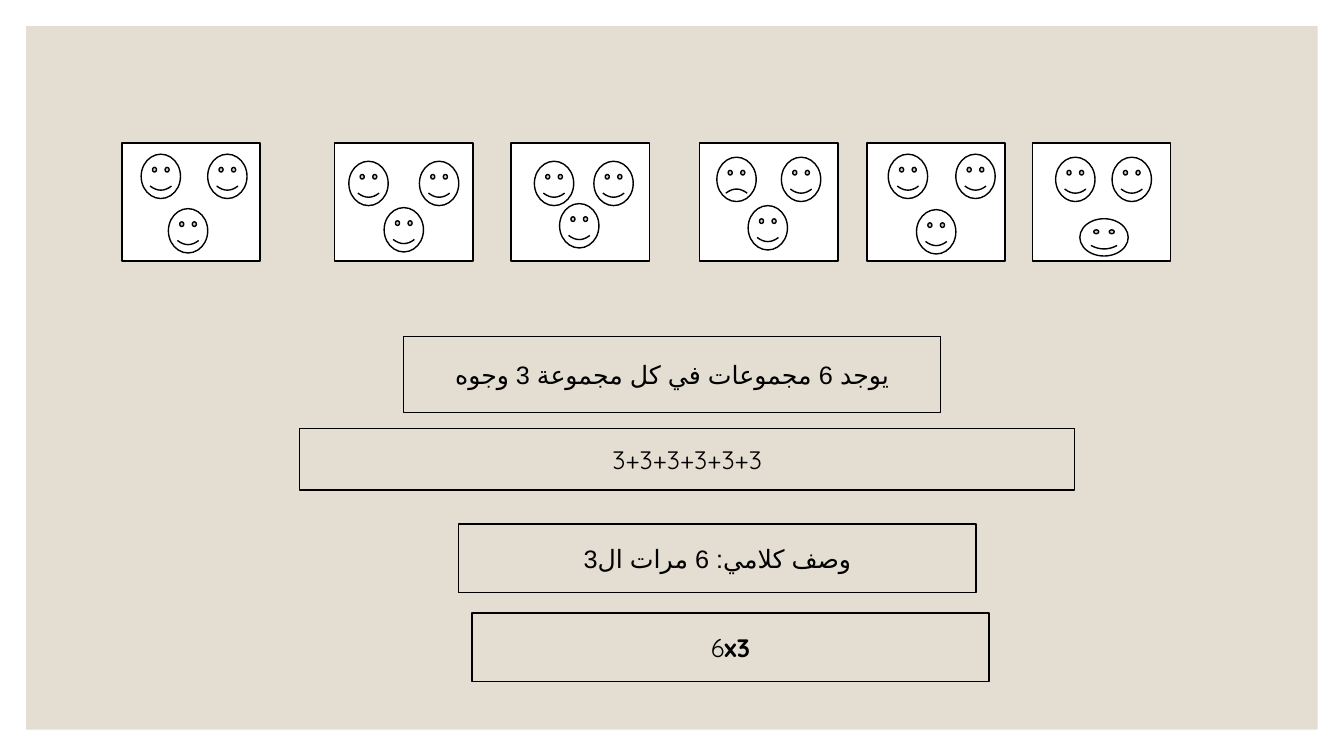
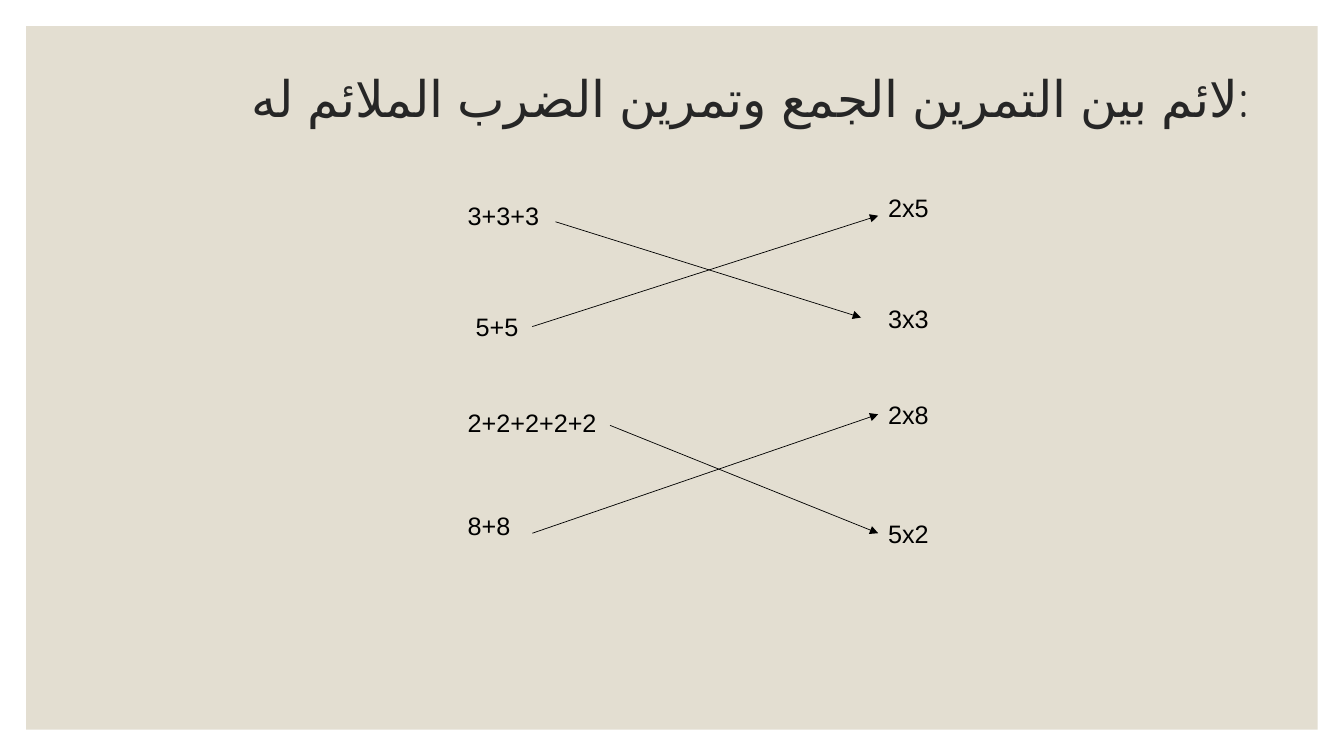
from pptx import Presentation
from pptx.dml.color import RGBColor
from pptx.enum.lang import MSO_LANGUAGE_ID
from pptx.enum.shapes import MSO_CONNECTOR, MSO_SHAPE
from pptx.enum.text import MSO_ANCHOR, PP_ALIGN
from pptx.oxml.ns import qn
from pptx.util import Inches, Pt
from lxml.etree import SubElement

BLACK = RGBColor(0x00, 0x00, 0x00)
WHITE = RGBColor(0xFF, 0xFF, 0xFF)
SAND = RGBColor(0xE3, 0xDE, 0xD1)
DARK = RGBColor(0x26, 0x26, 0x26)


def draw(slide, kind, x, y, w, h, fill, line=BLACK):
    shape = slide.shapes.add_shape(kind, Inches(x), Inches(y), Inches(w), Inches(h))
    shape.shadow.inherit = False
    shape.fill.solid()
    shape.fill.fore_color.rgb = fill
    if line is None:
        shape.line.fill.background()
    else:
        shape.line.color.rgb = line
        shape.line.width = Pt(1)
    return shape


def write(shape, *texts, size=18, font="Quicksand", color=BLACK,
          align=PP_ALIGN.LEFT, anchor=MSO_ANCHOR.TOP, space=1.0):
    """Write the texts as runs of one paragraph; those after the first are bold."""
    frame = shape.text_frame
    frame.word_wrap = True
    frame.vertical_anchor = anchor
    para = frame.paragraphs[0]
    para.alignment = align
    para.line_spacing = space
    for i, text in enumerate(texts):
        run = para.add_run()
        run.text = text
        run.font.size = Pt(size)
        run.font.name = font
        run.font.bold = i > 0
        run.font.color.rgb = color
        # Language and font for the Arabic letters
        run.font.language_id = MSO_LANGUAGE_ID.ARABIC
        SubElement(run.font._element, qn("a:cs"), typeface="Arial")


deck = Presentation()
deck.slide_width = Inches(13.33)
deck.slide_height = Inches(7.5)

# Both slides share a sand panel inside a white border
groups, match = [deck.slides.add_slide(deck.slide_layouts[6]) for _ in range(2)]
for slide in (groups, match):
    draw(slide, MSO_SHAPE.RECTANGLE, 0.26, 0.26, 12.81, 6.98, SAND, None)

# Slide 1: six cards, each with the left and top of three faces
cards = [
    (1.21, [(1.4, 1.53), (2.06, 1.53), (1.67, 2.07)]),
    (3.32, [(3.46, 1.6), (4.16, 1.6), (3.81, 2.06)]),
    (5.07, [(5.3, 1.6), (5.89, 1.6), (5.55, 2.02)]),
    (6.94, [(7.11, 1.56), (7.75, 1.56), (7.42, 2.04)]),
    (8.6, [(8.81, 1.53), (9.48, 1.53), (9.09, 2.08)]),
    (10.24, [(10.47, 1.56), (11.03, 1.56), (10.71, 2.17)]),
]
SAD = (7.11, 1.56)
WIDE = (10.71, 2.17)
for left, faces in cards:
    draw(groups, MSO_SHAPE.RECTANGLE, left, 1.42, 1.37, 1.17, WHITE)
    for spot in faces:
        w, h = (0.48, 0.37) if spot == WIDE else (0.39, 0.44)
        face = draw(groups, MSO_SHAPE.SMILEY_FACE, *spot, w, h, WHITE)
        if spot == SAD:
            face.adjustments[0] = -0.05

# Slide 1: the same sum in words and in signs
sums = [
    (4, 3.34, 5.33, 0.75, ["يوجد 6 مجموعات في كل مجموعة 3 وجوه"]),
    (2.97, 4.25, 7.69, 0.61, ["3+3+3+3+3+3"]),
    (4.55, 5.2, 5.13, 0.68, ["وصف كلامي: 6 مرات ال3"]),
    (4.68, 6.08, 5.13, 0.68, ["6", "x3"]),
]
for x, y, w, h, texts in sums:
    box = draw(groups, MSO_SHAPE.RECTANGLE, x, y, w, h, SAND)
    write(box, *texts, align=PP_ALIGN.CENTER, anchor=MSO_ANCHOR.MIDDLE)

# Slide 2: title
title = match.shapes.add_textbox(Inches(1.48), Inches(0.42), Inches(11), Inches(1.16))
write(title, "لائم بين التمرين الجمع وتمرين الضرب الملائم له:", size=36, color=DARK,
      align=PP_ALIGN.RIGHT, anchor=MSO_ANCHOR.MIDDLE, space=0.9)

# Slide 2: sums on the left, products on the right
terms = [
    (4.54, 1.94, 2.28, "3+3+3"), (4.62, 3.04, 2.36, "5+5"),
    (4.54, 3.99, 2.44, "2+2+2+2+2"), (4.54, 5.01, 1.81, "8+8"),
    (8.71, 1.86, 1.58, "2x5"), (8.71, 2.96, 1.5, "3x3"),
    (8.71, 3.91, 1.65, "2x8"), (8.71, 5.09, 1.81, "5x2"),
]
boxes = {}
for x, y, w, text in terms:
    boxes[text] = match.shapes.add_textbox(Inches(x), Inches(y), Inches(w), Inches(0.4))
    write(boxes[text], text, font="Arial")

# Slide 2: arrows from each sum to its product
arrows = [
    (5.51, 2.2, 8.54, 3.15, None),
    (5.28, 3.24, 8.71, 2.14, None),
    (6.05, 4.22, 8.71, 5.29, "5x2"),
    (5.28, 5.29, 8.71, 4.11, "2x8"),
]
for *ends, goal in arrows:
    arrow = match.shapes.add_connector(MSO_CONNECTOR.STRAIGHT, *map(Inches, ends))
    if goal:
        arrow.end_connect(boxes[goal], 1)
    arrow.line.color.rgb = BLACK
    arrow.line.width = Pt(0.5)
    SubElement(arrow.line._get_or_add_ln(), qn("a:tailEnd"), type="triangle")
    SubElement(arrow._element.spPr, qn("a:effectLst"))

deck.save("out.pptx")
